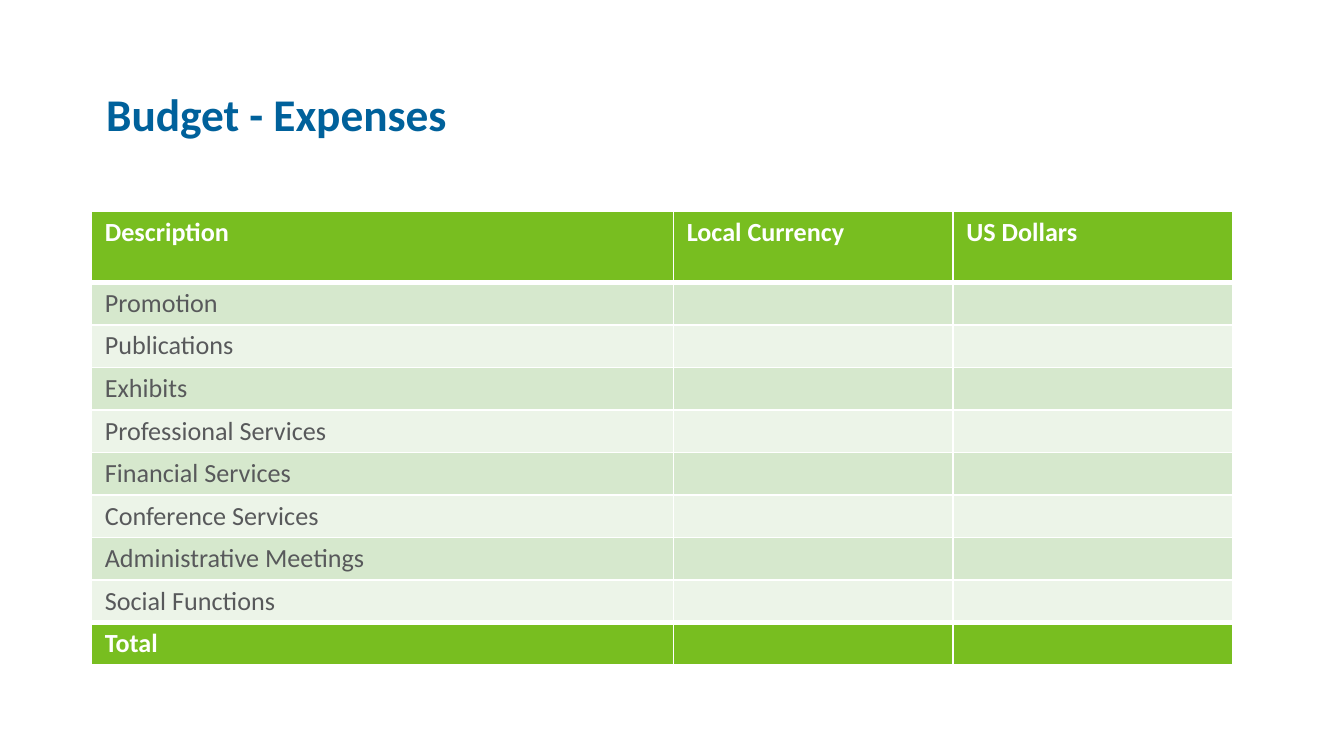
from lxml import etree
from pptx import Presentation
from pptx.dml.color import RGBColor
from pptx.enum.text import MSO_ANCHOR, MSO_AUTO_SIZE, PP_ALIGN
from pptx.oxml.ns import qn
from pptx.util import Inches, Pt

BLUE = RGBColor(0x00, 0x61, 0x9B)
GREEN = RGBColor(0x78, 0xBE, 0x20)
BAND_DARK = RGBColor(0xD6, 0xE8, 0xCD)
BAND_LIGHT = RGBColor(0xEC, 0xF4, 0xE8)
GRAY = RGBColor(0x58, 0x59, 0x5B)
WHITE = RGBColor(0xFF, 0xFF, 0xFF)

HEADERS = ["Description", "Local Currency", "US Dollars"]
EXPENSES = [
    "Promotion", "Publications", "Exhibits", "Professional Services",
    "Financial Services", "Conference Services", "Administrative Meetings",
    "Social Functions",
]


def write_text(text_frame, text, *, size, color, bold=False, line_spacing=None):
    paragraph = text_frame.paragraphs[0]
    paragraph.alignment = PP_ALIGN.LEFT
    paragraph.line_spacing = line_spacing
    if not text:
        # An empty cell needs its text size too, or its row grows
        etree.SubElement(paragraph._p, qn("a:endParaRPr"), sz=str(size * 100))
        return
    run = paragraph.add_run()
    run.text = text
    run.font.name = "Calibri"
    run.font.size = Pt(size)
    run.font.bold = bold
    run.font.color.rgb = color


def set_borders(cell, top, bottom):
    """Draw white borders, 1 pt at the sides and the given points above and below."""
    properties = cell._tc.get_or_add_tcPr()
    widths = {"a:lnL": 1, "a:lnR": 1, "a:lnT": top, "a:lnB": bottom}
    for position, (tag, width) in enumerate(widths.items()):
        line = etree.Element(qn(tag), w=str(Pt(width)))
        fill = etree.SubElement(line, qn("a:solidFill"))
        etree.SubElement(fill, qn("a:srgbClr"), val=str(WHITE))
        properties.insert(position, line)


presentation = Presentation()
presentation.slide_width = Inches(10)
presentation.slide_height = Inches(10) * 9 // 16
slide = presentation.slides.add_slide(presentation.slide_layouts[5])

title = slide.shapes.title
title.left, title.top = Inches(0.69), Inches(0.64)
title.width, title.height = Inches(4.88), Inches(0.46)
title.text_frame.auto_size = MSO_AUTO_SIZE.NONE
title.text_frame.vertical_anchor = MSO_ANCHOR.MIDDLE
write_text(title.text_frame, "Budget - Expenses", size=24.3, color=BLUE,
           bold=True, line_spacing=0.9)

rows = [HEADERS] + [[name, "", ""] for name in EXPENSES] + [["Total", "", ""]]
last = len(rows) - 1
table = slide.shapes.add_table(
    len(rows), len(HEADERS), Inches(0.68), Inches(1.57), Inches(8.5), Inches(3.3)
).table
for column, width in zip(table.columns, (4.33, 2.08, 2.08)):
    column.width = Inches(width)

for row_index, texts in enumerate(rows):
    table.rows[row_index].height = Inches(0.31 if row_index else 0.53)
    emphasized = row_index in (0, last)
    band = BAND_DARK if row_index % 2 else BAND_LIGHT
    for column_index, text in enumerate(texts):
        cell = table.cell(row_index, column_index)
        cell.margin_left = cell.margin_right = Inches(0.1)
        cell.margin_top = cell.margin_bottom = Inches(0.04)
        cell.fill.solid()
        cell.fill.fore_color.rgb = GREEN if emphasized else band
        set_borders(cell, top=3 if row_index in (1, last) else 1,
                    bottom=3 if row_index in (0, last - 1) else 1)
        write_text(cell.text_frame, text, size=14, bold=emphasized,
                   color=WHITE if emphasized else GRAY)

presentation.save("out.pptx")
